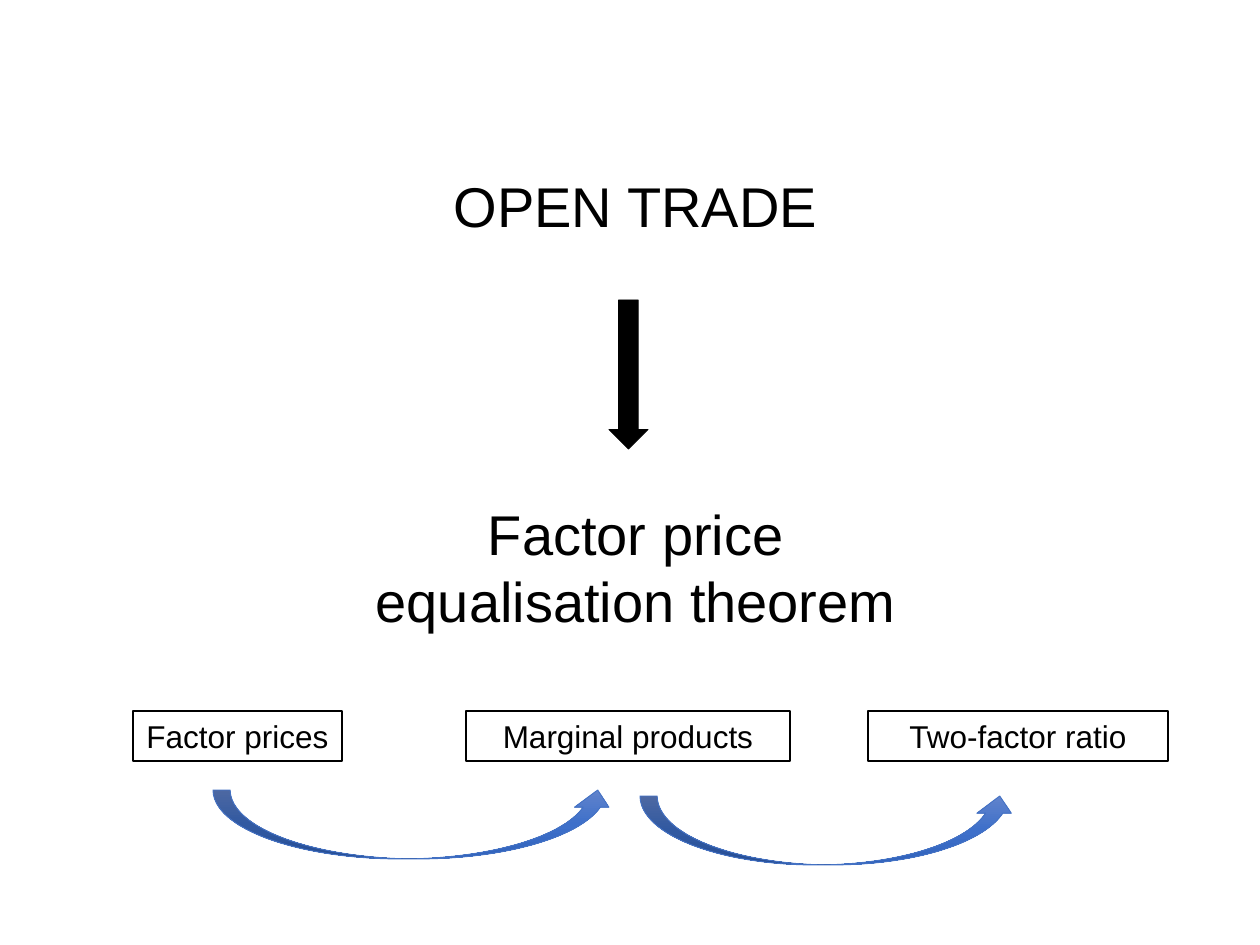
from copy import deepcopy

from pptx import Presentation
from pptx.dml.color import RGBColor
from pptx.enum import shapes, text
from pptx.oxml.ns import qn
from pptx.util import Emu, Pt

COLORS = {"ink": "000000", "edge": "4472C4",
          "top": "6183CB", "middle": "3E70CA", "bottom": "3062BB"}
FONT = "Arial"


def box(*lengths):
    """Turn px lengths (126 to the inch) into EMU."""
    return [Emu(round(n * 914400 / 126)) for n in lengths]


def write(s, words, size):
    tf = s.text_frame
    tf.word_wrap = True
    tf.auto_size = text.MSO_AUTO_SIZE.NONE
    tf.vertical_anchor = text.MSO_ANCHOR.TOP
    tf.text = words
    p = tf.paragraphs[0]
    p.alignment = text.PP_ALIGN.CENTER
    font = p.runs[0].font
    font.name, font.size = FONT, Pt(size)
    font.color.rgb = RGBColor.from_string(COLORS["ink"])


prs = Presentation()
prs.slide_width, prs.slide_height = box(1260, 945)
s = prs.slides.add_slide(prs.slide_layouts[5])
sp = s.shapes
ink = RGBColor.from_string(COLORS["ink"])

# Cause, arrow and theorem
title = sp.title
title.left, title.top, title.width, title.height = box(432, 165, 407, 81)
write(title, "OPEN TRADE", 32)

down = sp.add_shape(shapes.MSO_SHAPE.DOWN_ARROW, *box(609, 300, 39, 149))
down.shadow.inherit = False
down.fill.solid()
down.fill.fore_color.rgb = ink
down.line.color.rgb = ink
down.line.width = Pt(0.5)

theorem = sp.add_textbox(*box(343, 493, 586, 149))
write(theorem, "Factor price equalisation theorem", 32)

# Chain of variables
for left, width, words in [(133, 209, "Factor prices"),
                           (466, 324, "Marginal products"),
                           (868, 300, "Two-factor ratio")]:
    label = sp.add_shape(shapes.MSO_SHAPE.RECTANGLE, *box(left, 711, width, 50))
    label.shadow.inherit = False
    label.fill.background()
    label.line.color.rgb = ink
    label.line.width = Pt(0.75)
    write(label, words, 18)

# Curved links between neighbouring variables
for left, top, width in [(213, 790, 402), (640, 796, 377)]:
    link = sp.add_shape(shapes.MSO_SHAPE.CURVED_UP_ARROW, *box(left, top, width, 69))
    link.shadow.inherit = False
    link.fill.gradient()
    link.fill.gradient_angle = 270
    stop_list = link._element.spPr.find(qn("a:gradFill")).find(qn("a:gsLst"))
    stop_list.insert(1, deepcopy(stop_list[0]))
    for stop, position, name in zip(link.fill.gradient_stops, (0, 0.5, 1),
                                    ("top", "middle", "bottom")):
        stop.position = position
        stop.color.rgb = RGBColor.from_string(COLORS[name])
    link.line.color.rgb = RGBColor.from_string(COLORS["edge"])
    link.line.width = Pt(0.5)

prs.save("out.pptx")
